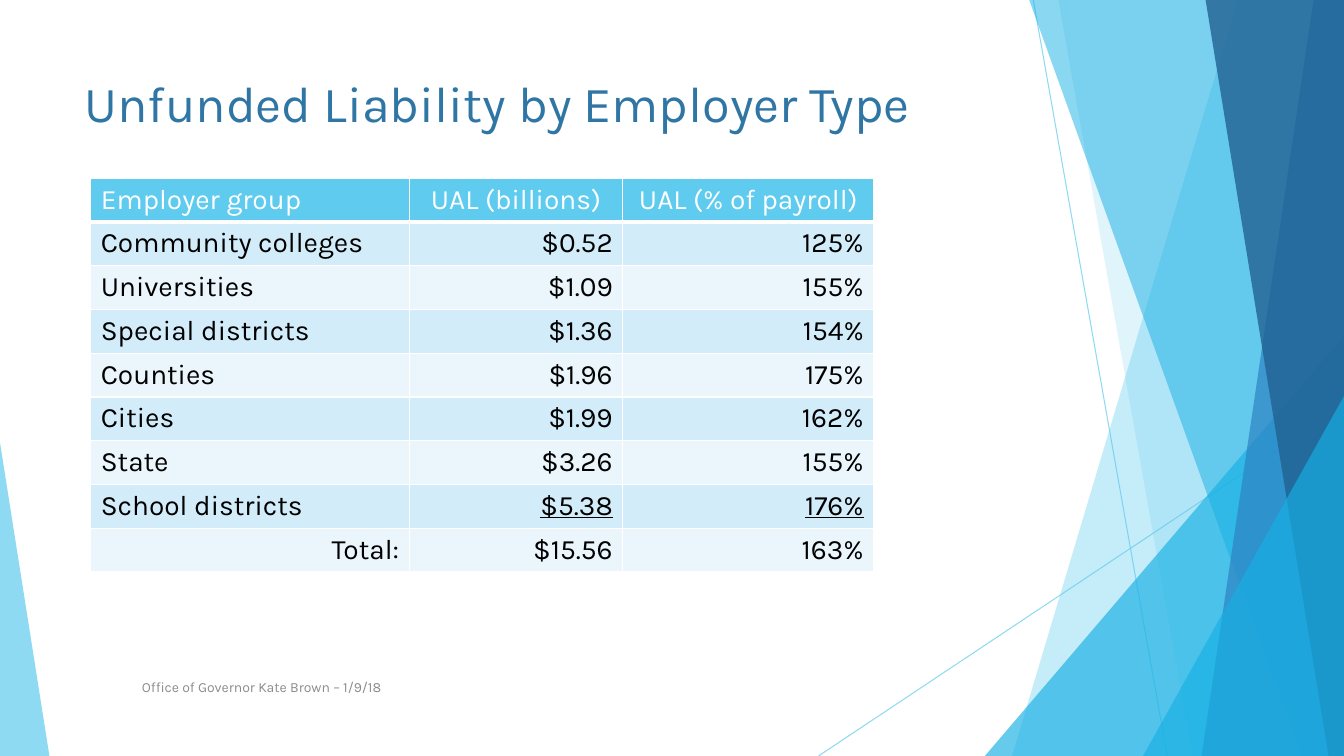
from lxml.etree import SubElement
from pptx import Presentation
from pptx.dml.color import RGBColor
from pptx.enum.shapes import MSO_CONNECTOR, MSO_SHAPE
from pptx.enum.text import MSO_ANCHOR, MSO_AUTO_SIZE, PP_ALIGN
from pptx.oxml.ns import qn
from pptx.util import Inches, Pt

COLORS = {
    "sky": "5FCBEF", "cyan": "17B0E4", "blue": "2E83C3", "navy": "226292",
    "title": "3076A4", "footer": "8C8C8C", "white": "FFFFFF", "black": "000000",
    "band_dark": "D2ECF9", "band_light": "EAF6FC",
}
FONT = "Karla"
LEFT, CENTER, RIGHT = PP_ALIGN.LEFT, PP_ALIGN.CENTER, PP_ALIGN.RIGHT

HEADER = ["Employer group", "UAL (billions)", "UAL (% of payroll)"]
ROWS = [
    ["Community colleges", "$0.52", "125%"],
    ["Universities", "$1.09", "155%"],
    ["Special districts", "$1.36", "154%"],
    ["Counties", "$1.96", "175%"],
    ["Cities", "$1.99", "162%"],
    ["State", "$3.26", "155%"],
    ["School districts", "$5.38", "176%"],
    ["Total:", "$15.56", "163%"],
]


def rgb(name):
    return RGBColor.from_string(COLORS[name])


def write(tf, text, size=20, color="black", align=LEFT, underline=None):
    p = tf.paragraphs[0]
    p.alignment = align
    r = p.add_run()
    r.text = text
    r.font.name, r.font.size = FONT, Pt(size)
    r.font.color.rgb = rgb(color)
    r.font.underline = underline


def set_alpha(sp, percent):
    for clr in sp._element.spPr.iter(qn("a:srgbClr")):
        SubElement(clr, qn("a:alpha")).set("val", str(percent * 1000))


def set_borders(cell, bottom):
    tcPr = cell._tc.get_or_add_tcPr()
    for side, width in (("L", 1), ("R", 1), ("T", 1), ("B", bottom)):
        ln = SubElement(tcPr, qn(f"a:ln{side}"), w=str(Pt(width)))
        fill = SubElement(ln, qn("a:solidFill"))
        SubElement(fill, qn("a:srgbClr"), val=COLORS["white"])


class Deck:
    """Places elements by percent of the slide's width and height."""

    def __init__(self, prs):
        self.prs = prs
        self.s = prs.slides.add_slide(prs.slide_layouts[5])

    def x(self, share):
        return round(self.prs.slide_width * share / 100)

    def y(self, share):
        return round(self.prs.slide_height * share / 100)

    def box(self, left, top, width, height):
        return self.x(left), self.y(top), self.x(width), self.y(height)

    def paint(self, sp, color, alpha):
        sp.shadow.inherit = False
        sp.fill.solid()
        sp.fill.fore_color.rgb = rgb(color)
        sp.line.fill.background()
        set_alpha(sp, alpha)

    def line(self, x1, y1, x2, y2):
        sp = self.s.shapes.add_connector(
            MSO_CONNECTOR.STRAIGHT, self.x(x1), self.y(y1), self.x(x2), self.y(y2))
        sp.line.color.rgb = rgb("sky")
        sp.line.width = Pt(0.75)
        set_alpha(sp, 70)
        SubElement(sp._element.spPr, qn("a:effectLst"))

    def facet(self, top_x, bottom_x, color, alpha):
        """Full-height band from a slanted left edge to the slide's right edge."""
        fb = self.s.shapes.build_freeform(self.x(top_x), 0)
        corners = [(100, 0), (100, 100), (bottom_x, 100)]
        fb.add_line_segments([(self.x(a), self.y(b)) for a, b in corners])
        self.paint(fb.convert_to_shape(), color, alpha)

    def triangle(self, left, top, width, apex, color, alpha):
        """Triangle standing on the slide's bottom edge."""
        sp = self.s.shapes.add_shape(
            MSO_SHAPE.ISOSCELES_TRIANGLE, *self.box(left, top, width, 100 - top))
        sp.adjustments[0] = apex
        self.paint(sp, color, alpha)

    def title(self, text, *place):
        sp = self.s.shapes.title
        sp.left, sp.top, sp.width, sp.height = self.box(*place)
        tf = sp.text_frame
        tf.word_wrap, tf.auto_size = True, MSO_AUTO_SIZE.NONE
        tf.vertical_anchor = MSO_ANCHOR.TOP
        write(tf, text, size=36, color="title")
        self.s.shapes._spTree.append(sp._element)

    def footer(self, text, *place):
        tf = self.s.shapes.add_textbox(*self.box(*place)).text_frame
        tf.word_wrap = True
        tf.vertical_anchor = MSO_ANCHOR.MIDDLE
        write(tf, text, size=10, color="footer")

    def table(self, left, top, col_widths, row_height):
        data = [HEADER] + ROWS
        last = len(data) - 1
        place = self.box(left, top, sum(col_widths), row_height * len(data))
        tbl = self.s.shapes.add_table(len(data), len(HEADER), *place).table
        for col, width in zip(tbl.columns, col_widths):
            col.width = self.x(width)
        for i, values in enumerate(data):
            tbl.rows[i].height = self.y(row_height)
            fill = "sky" if i == 0 else "band_dark" if i % 2 else "band_light"
            for j, value in enumerate(values):
                cell = tbl.cell(i, j)
                set_borders(cell, bottom=1 if i else 3)
                cell.fill.solid()
                cell.fill.fore_color.rgb = rgb(fill)
                if j == 0:
                    align = RIGHT if i == last else LEFT
                else:
                    align = RIGHT if i else CENTER
                write(cell.text_frame, value, align=align,
                      color="black" if i else "white",
                      underline=True if j and i == last - 1 else None)


def main():
    prs = Presentation()
    prs.slide_width, prs.slide_height = Inches(13.33), Inches(7.5)
    deck = Deck(prs)

    # Background lines and facets, back to front
    deck.line(76.88, 0, 86.85, 100)
    deck.line(100, 53.73, 60.9, 100)
    deck.facet(92.1, 75.3, "sky", 36)
    deck.facet(78.75, 88.73, "sky", 20)
    deck.triangle(73.28, 44.4, 26.72, 1, "cyan", 66)
    deck.facet(76.58, 96.83, "cyan", 50)
    deck.facet(97.73, 89.4, "blue", 70)
    deck.facet(89.7, 98.85, "navy", 80)
    deck.triangle(85.05, 52.4, 14.95, 1, "cyan", 66)
    deck.triangle(0, 58.53, 3.68, 0, "sky", 70)

    # Title, footer and table
    deck.title("Unfunded Liability by Employer Type", 5.55, 8.93, 70.5, 19.2)
    deck.footer("Office of Governor Kate Brown – 1/9/18", 9.83, 88.13, 51.68, 5.33)
    deck.table(6.75, 23.6, [23.7, 15.9, 18.68], 5.47)

    prs.save("out.pptx")


if __name__ == "__main__":
    main()
